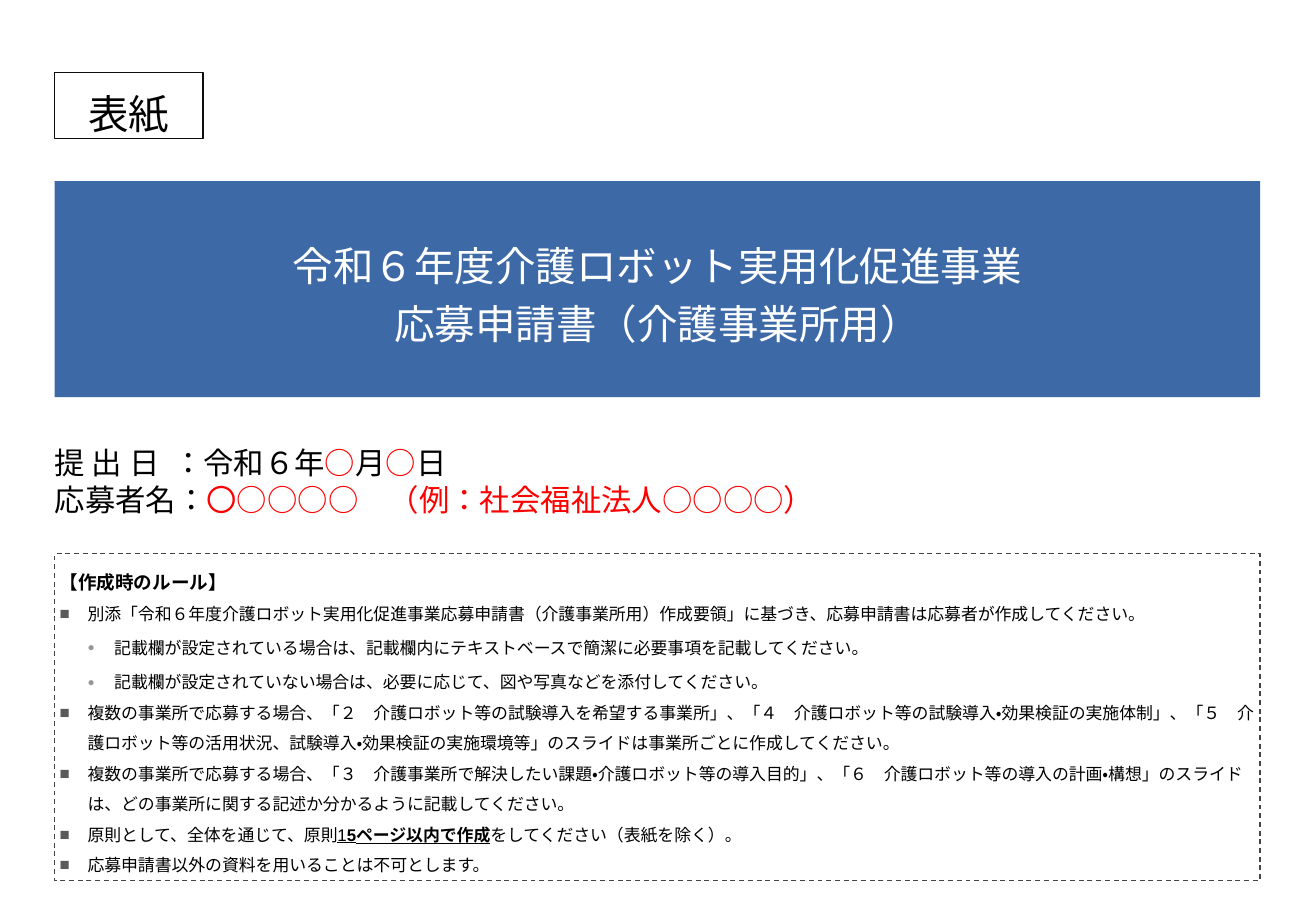
import pptx
import pptx.dml.color
import pptx.enum.dml
import pptx.enum.lang
import pptx.enum.shapes
import pptx.enum.text
import pptx.oxml
import pptx.oxml.ns
import pptx.util

PX = 9144  # 100 px to the inch
LEFT, WIDE = 45, 992
BLACK, RED, WHITE = "000000", "FF0000", "FFFFFF"
ALIGN = pptx.enum.text.PP_ALIGN
ANCHOR = pptx.enum.text.MSO_ANCHOR

# bullet sign, colour, size in percent, left edge, hanging indent, line spacing
MAIN = ("■", "5A5A5A", 100, 23, 23, 1.5)
SUB = ("●", "969696", 70, 45, 22, 1.7)

RULES = [
    (MAIN, ["別添「令和６年度介護ロボット実用化促進事業応募申請書（介護事業所用）作成要領」に基づき、応募申請書は応募者が作成してください。"]),
    (SUB, ["記載欄が設定されている場合は、記載欄内にテキストベースで簡潔に必要事項を記載してください。"]),
    (SUB, ["記載欄が設定されていない場合は、必要に応じて、図や写真などを添付してください。"]),
    (MAIN, ["複数の事業所で応募する場合、「２　介護ロボット等の試験導入を希望する事業所」、「４　介護ロボット等の試験導入・効果検証の実施体制」、「５　介護ロボット等の活用状況、試験導入・効果検証の実施環境等」のスライドは事業所ごとに作成してください。"]),
    (MAIN, ["複数の事業所で応募する場合、「３　介護事業所で解決したい課題・介護ロボット等の導入目的」、「６　介護ロボット等の導入の計画・構想」のスライドは、どの事業所に関する記述か分かるように記載してください。"]),
    (MAIN, ["原則として、全体を通じて、原則", ("1", {"underline": True}),
            ("5ページ以内で作成", {"underline": True, "bold": True}),
            "をしてください（表紙を除く）。"]),
    (MAIN, ["応募申請書以外の資料を用いることは不可とします。"]),
]

ENTRY = [
    ["提 出 日  ：令和６年", ("○", RED), "月", ("○", RED), "日"],
    ["応募者名：", ("〇○○○○　（例：社会福祉法人○○○○）", RED)],
]


def px(count):
    return pptx.util.Emu(count * PX)


def color(code):
    return pptx.dml.color.RGBColor.from_string(code)


def pad(frame, left, top, right, bottom):
    frame.margin_left, frame.margin_top = px(left), px(top)
    frame.margin_right, frame.margin_bottom = px(right), px(bottom)


def add_box(slide, top, width, height, fill=None, line=None, dash=None):
    box = slide.shapes.add_shape(
        pptx.enum.shapes.MSO_SHAPE.RECTANGLE,
        px(LEFT), px(top), px(width), px(height))
    box.shadow.inherit = False
    if fill:
        box.fill.solid()
        box.fill.fore_color.rgb = color(fill)
    else:
        box.fill.background()
    if line:
        box.line.color.rgb = color(line)
        box.line.width = pptx.util.Pt(0.75)
        box.line.dash_style = dash
    else:
        box.line.fill.background()
    return box


def style(para, size, ink=BLACK, bold=False, space=1.0, align=ALIGN.LEFT):
    para.alignment = align
    para.line_spacing = space
    font = para.font
    font.name = "Arial"
    font.size = pptx.util.Pt(size)
    font.bold = bold
    if ink:
        font.color.rgb = color(ink)


def add_run(para, text):
    run = para.add_run()
    run.text = text
    run.font.language_id = pptx.enum.lang.MSO_LANGUAGE_ID.JAPANESE
    return run


def hang(para, left, depth):
    """Set the left edge and the hanging indent; return the properties."""
    props = para._p.get_or_add_pPr()
    props.set("marL", str(px(left)))
    props.set("indent", str(px(-depth)))
    return props


def set_bullet(para, sign, ink, scale, left, depth):
    props = hang(para, left, depth)
    space = pptx.oxml.ns.nsdecls("a")
    parts = [
        f'<a:buClr {space}><a:srgbClr val="{ink}"/></a:buClr>',
        f'<a:buSzPct {space} val="{scale * 1000}"/>',
        f'<a:buFont {space} typeface="Arial"/>',
        f'<a:buChar {space} char="{sign}"/>',
    ]
    first = props.find(pptx.oxml.ns.qn("a:defRPr"))
    for part in parts:
        first.addprevious(pptx.oxml.parse_xml(part))


def add_title(box, text, ink, anchor):
    frame = box.text_frame
    frame.vertical_anchor = anchor
    para = frame.paragraphs[0]
    style(para, 24, ink, space=1.2, align=ALIGN.CENTER)
    for count, line in enumerate(text.split("\n")):
        if count:
            para.add_line_break()
        add_run(para, line)


def add_entry(slide):
    box = slide.shapes.add_textbox(px(LEFT), px(362), px(WIDE), px(70))
    frame = box.text_frame
    frame.word_wrap = True
    pad(frame, 0, 4, 0, 5)
    for count, parts in enumerate(ENTRY):
        para = frame.add_paragraph() if count else frame.paragraphs[0]
        style(para, 18, ink=None)
        hang(para, 29, 29)
        for part in parts:
            text, ink = (part, BLACK) if isinstance(part, str) else part
            add_run(para, text).font.color.rgb = color(ink)


def add_rules(slide):
    box = add_box(slide, 456, WIDE, 269, line="444444",
                  dash=pptx.enum.dml.MSO_LINE.DASH)
    frame = box.text_frame
    frame.word_wrap = True
    frame.vertical_anchor = ANCHOR.MIDDLE
    pad(frame, 4, 4, 4, 4)
    head = frame.paragraphs[0]
    style(head, 11, bold=True, space=1.5)
    add_run(head, "【作成時のルール】")
    for (*bullet, space), parts in RULES:
        para = frame.add_paragraph()
        para.level = int(bullet[0] == SUB[0])
        style(para, 10, space=space)
        set_bullet(para, *bullet)
        for part in parts:
            text, marks = (part, {}) if isinstance(part, str) else part
            run = add_run(para, text)
            for name, value in marks.items():
                setattr(run.font, name, value)


def main():
    deck = pptx.Presentation()
    deck.slide_width, deck.slide_height = px(1083), px(750)
    slide = deck.slides.add_slide(deck.slide_layouts[6])
    add_entry(slide)
    add_rules(slide)
    cover = add_box(slide, 60, 122, 54, line="0D0D0D")
    add_title(cover, "表紙", BLACK, ANCHOR.TOP)
    banner = add_box(slide, 149, WIDE, 178, fill="3D6AA7")
    pad(banner.text_frame, 2, 2, 2, 2)
    add_title(banner, "令和６年度介護ロボット実用化促進事業\n応募申請書（介護事業所用）",
              WHITE, ANCHOR.MIDDLE)
    deck.save("out.pptx")


if __name__ == "__main__":
    main()
